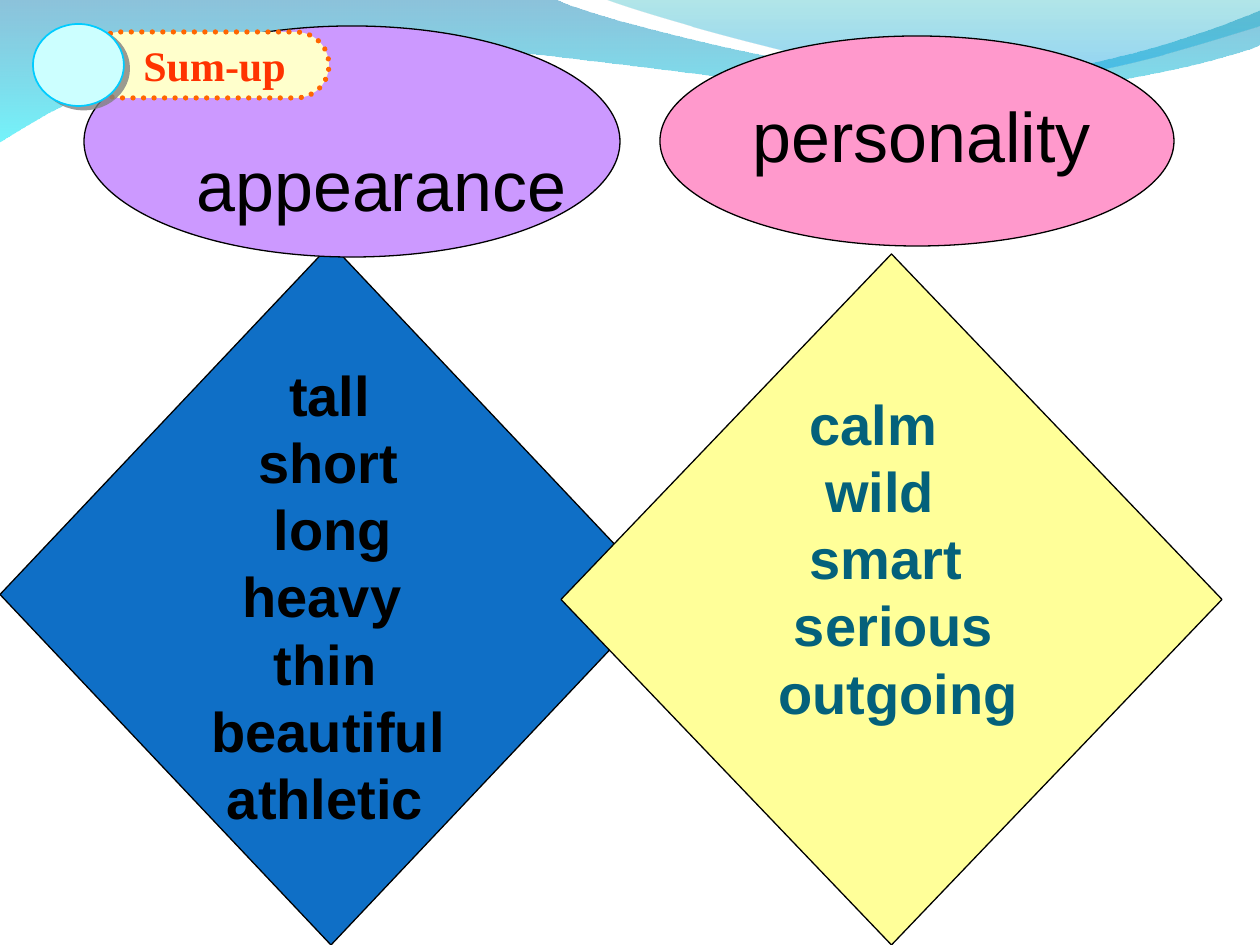
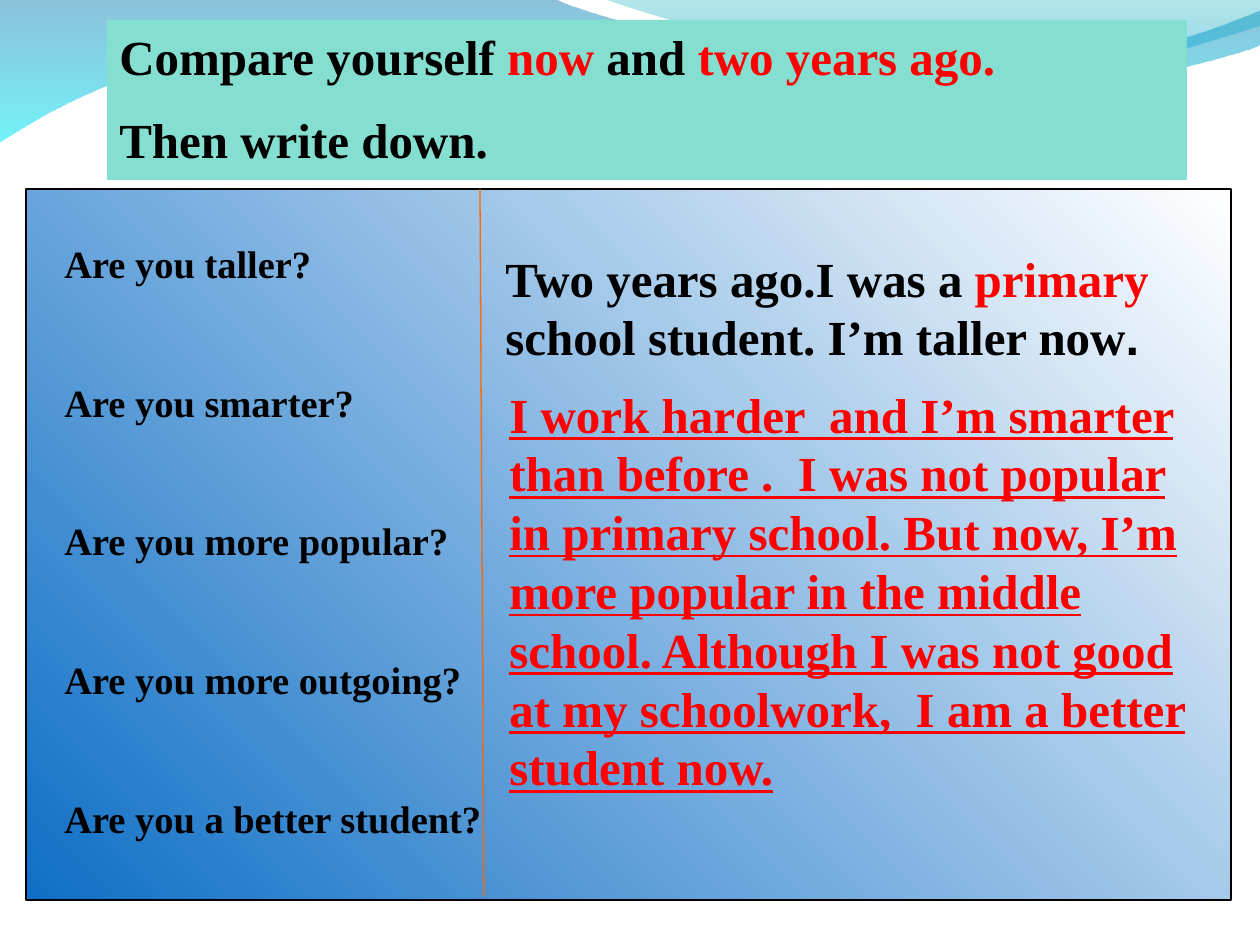
from lxml import etree
from pptx import Presentation
from pptx.dml.color import RGBColor
from pptx.enum.dml import MSO_LINE
from pptx.enum.shapes import MSO_CONNECTOR, MSO_SHAPE
from pptx.enum.text import MSO_ANCHOR, PP_ALIGN
from pptx.oxml.ns import qn
from pptx.util import Pt

RECT = MSO_SHAPE.RECTANGLE
OVAL = MSO_SHAPE.OVAL
PILL = MSO_SHAPE.ROUNDED_RECTANGLE
DIAMOND = MSO_SHAPE.FLOWCHART_DECISION
STRAIGHT = MSO_CONNECTOR.STRAIGHT
DOTTED = MSO_LINE.ROUND_DOT
TOP = MSO_ANCHOR.TOP
LEFT = PP_ALIGN.LEFT

EMU_PER_PX = 914400 / 126
SANS = "Arial"
SERIF = "Times New Roman"
LINE_HEIGHT = 1.2
WORD_SIZE = 32
WORD_STEP = 15.56  # px, one indent step of the word lists

COLORS = {
    "black": "000000", "blue": "0F6FC6", "white": "FFFFFF",
    "yellow": "FFFF99", "purple": "CC99FF", "pink": "FF99CC",
    "teal": "04617B", "cream": "FFFFCC", "orange": "FF6600",
    "ice": "CCFFFF", "sky": "00CCFF", "gray": "808080",
    "sum_up": "FF3300", "red": "FF0000", "mint": "85DFD0",
    "wave_blue": "0079AF", "wave_cyan": "00EBF8",
    "wave_green": "00ADB6", "wave_azure": "009BE5",
}

# One point is a line end; three points are a Bézier curve.
BACK_WAVE = [
    ((0, -1),), ((554, -1),),
    ((600, 21), (837, 79), (955, 79)),
    ((1075, 79), (1207, 33), (1260, 11)),
    ((1261, 45),),
    ((1239, 55), (1096, 96), (940, 95)),
    ((784, 95), (481, 35), (324, 43)),
    ((163, 44), (58, 105), (-1, 142)),
]
FRONT_WAVE = [
    ((604, -1),),
    ((641, 14), (859, 78), (969, 82)),
    ((1079, 87), (1211, 40), (1260, 26)),
    ((1260, 0),),
]


def px(value):
    return round(value * EMU_PER_PX)


def rgb(name):
    return RGBColor.from_string(COLORS[name])


def set_gradient(shape, stops, angle):
    """Fill with two (position, colour, opacity %) stops; angle is counter-clockwise."""
    shape.fill.gradient()
    shape.fill.gradient_angle = angle
    for stop, (position, color, _) in zip(shape.fill.gradient_stops, stops):
        stop.position = position
        stop.color.rgb = rgb(color)
    tints = shape.element.spPr.iter(qn("a:srgbClr"))
    for tint, (_, _, opacity) in zip(tints, stops):
        if opacity < 100:
            etree.SubElement(tint, qn("a:alpha"), val=str(opacity * 1000))


def bend(shape, segments):
    """Merge the three lines that stand for each curve into one Bézier."""
    lines = iter(list(shape.element.spPr.iter(qn("a:lnTo"))))
    for segment in segments[1:]:
        first, *others = [next(lines) for _ in segment]
        if others:
            first.tag = qn("a:cubicBezTo")
        for other in others:
            first.append(other[0])
            other.getparent().remove(other)


def add_wave(page, segments, stops):
    start, *rest = [(px(x), px(y)) for segment in segments for x, y in segment]
    builder = page.shapes.build_freeform(*start, scale=1.0)
    builder.add_line_segments(rest, close=True)
    wave = builder.convert_to_shape()
    bend(wave, segments)
    wave.shadow.inherit = False
    wave.line.fill.background()
    set_gradient(wave, stops, 270)


def add_figure(page, kind, place, fill=None, line="black", width=0.75):
    figure = page.shapes.add_shape(kind, *map(px, place))
    figure.shadow.inherit = False
    if fill:
        figure.fill.solid()
        figure.fill.fore_color.rgb = rgb(fill)
    if line:
        figure.line.color.rgb = rgb(line)
        figure.line.width = Pt(width)
    else:
        figure.line.fill.background()
    return figure


def add_hard_shadow(shape, color, opacity, distance, angle):
    effects = shape.element.spPr.find(qn("a:effectLst"))
    shadow = etree.SubElement(effects, qn("a:outerShdw"), dist=str(Pt(distance)),
                              dir=str(angle * 60000), algn="ctr", rotWithShape="0")
    tint = etree.SubElement(shadow, qn("a:srgbClr"), val=COLORS[color])
    etree.SubElement(tint, qn("a:alpha"), val=str(opacity * 1000))


def write(shape, paragraphs, size, font=SERIF, color="black", bold=True, underline=None,
          gap=0, leading=LINE_HEIGHT, indents=None):
    """Write paragraphs, each a string or a list of (text, overrides) spans."""
    frame = shape.text_frame
    frame.word_wrap = True
    frame.vertical_anchor = TOP
    for index, content in enumerate(paragraphs):
        para = frame.paragraphs[0] if index == 0 else frame.add_paragraph()
        para.alignment = LEFT
        para.line_spacing = Pt(size * leading)
        para.space_before = Pt(gap if index else 0)
        if indents:
            properties = para._p.get_or_add_pPr()
            properties.set("marL", "0")
            properties.set("indent", str(px(indents[index] * WORD_STEP)))
        spans = [(content, {})] if isinstance(content, str) else content
        for text, changes in spans:
            span = para.add_run()
            span.text = text
            span.font.name = changes.get("font", font)
            span.font.size = Pt(size)
            span.font.bold = bold
            span.font.underline = underline
            span.font.color.rgb = rgb(changes.get("color", color))


def add_text(page, place, paragraphs, size, **style):
    box = page.shapes.add_textbox(*map(px, place))
    write(box, paragraphs, size, **style)


def add_words(page, place, words, color):
    """Write a staggered list from (word, indent steps) pairs."""
    names, steps = zip(*words)
    add_text(page, place, names, WORD_SIZE, font=SANS, color=color, indents=steps)


def add_divider(page, start, end, color):
    divider = page.shapes.add_connector(STRAIGHT, *map(px, start + end))
    divider.line.color.rgb = rgb(color)
    divider.line.width = Pt(0.75)
    etree.SubElement(divider.element.spPr, qn("a:effectLst"))


def add_page(deck):
    page = deck.slides.add_slide(deck.slide_layouts[6])
    add_wave(page, BACK_WAVE, [(0, "wave_blue", 45), (1, "wave_cyan", 55)])
    add_wave(page, FRONT_WAVE, [(0, "wave_green", 30), (0.8, "wave_azure", 42)])
    return page


def add_sum_up_badge(page):
    pill = add_figure(page, PILL, (87, 32, 242, 66), "cream", "orange", 3)
    pill.adjustments[0] = 0.5
    pill.line.dash_style = DOTTED
    pill.element.spPr.find(qn("a:ln")).set("cap", "rnd")
    knob = add_figure(page, OVAL, (33, 24, 91, 82), "ice", "sky", 1)
    add_hard_shadow(knob, "gray", 79, 3.6, 34)
    add_text(page, (131, 38, 227, 60), ["Sum-up"], 24, color="sum_up", leading=1.09)


def build_sum_up(deck):
    page = add_page(deck)
    add_figure(page, DIAMOND, (0, 244, 662, 701), "blue")
    add_figure(page, DIAMOND, (561, 254, 661, 691), "yellow")
    add_figure(page, OVAL, (84, 26, 536, 231), "purple")
    add_figure(page, OVAL, (660, 36, 514, 210), "pink")
    add_text(page, (184, 135, 399, 97), ["appearance"], 40, font=SANS, bold=False)
    add_text(page, (740, 86, 451, 97), ["personality"], 40, font=SANS, bold=False)
    add_words(page, (199, 354, 450, 483),
              [("tall", 5), ("short", 3), ("long", 4), ("heavy", 2), ("thin", 4),
               ("beautiful", 0), ("athletic", 1)], "black")
    add_words(page, (766, 383, 389, 349),
              [("calm", 2), ("wild", 3), ("smart", 2), ("serious outgoing", 1)], "teal")
    add_sum_up_badge(page)


def build_comparison(deck):
    page = add_page(deck)
    red = {"color": "red"}
    panel = add_figure(page, RECT, (26, 189, 1205, 711))
    set_gradient(panel, [(0, "blue", 100), (1, "white", 100)], 45)
    questions = [f"Are you {quality}?" for quality in
                 ("taller", "smarter", "more popular", "more outgoing", "a better student")]
    add_text(page, (52, 234, 470, 706), questions, 22, gap=52.8)
    add_divider(page, (480, 189), (484, 896), "orange")
    title = add_figure(page, RECT, (107, 20, 1080, 160), "mint", line=None)
    write(title, [[("Compare yourself ", {}), ("now ", red), ("and ", {}),
                   ("two years ago.", red)],
                  "Then write down."], 28, gap=14)
    add_text(page, (493, 242, 746, 130),
             [[("Two years ago.I was a ", {}), ("primary ", red),
               ("school student. I’m taller now", {}), (".", {"font": SANS})]], 28)
    add_text(page, (497, 378, 732, 425),
             ["I work harder  and I’m smarter than before .  I was not popular in primary "
              "school. But now, I’m more popular in the middle school. Although I was not "
              "good at my schoolwork,  I am a better student now."],
             28, color="red", underline=True)


def main():
    deck = Presentation()
    deck.slide_width = px(1260)
    deck.slide_height = px(945)
    build_sum_up(deck)
    build_comparison(deck)
    deck.save("out.pptx")


if __name__ == "__main__":
    main()
